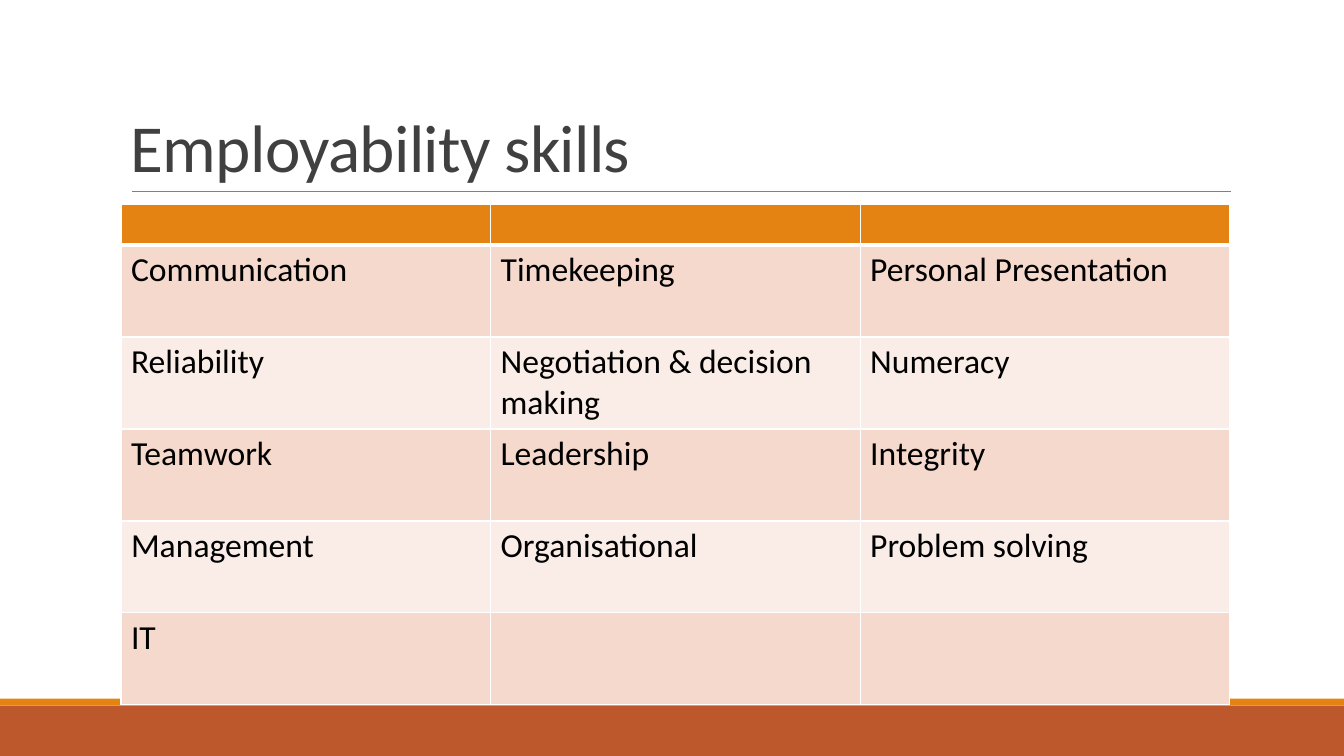
"""Build a slide with a table of employability skills."""
from lxml.etree import SubElement
from pptx import Presentation
from pptx.dml.color import RGBColor
from pptx.enum.shapes import MSO_CONNECTOR, MSO_SHAPE
from pptx.enum.text import MSO_ANCHOR
from pptx.oxml.ns import qn
from pptx.util import Inches, Pt

WIDE, HIGH = Inches(13.33), Inches(7.5)
LEFT, SPAN = 9, 82.5
ORANGE, RUST, WHITE = "E48312", "BD582C", "FFFFFF"
BANDS = ["F5D9CC", "FAEDE7"]
HEAD_ROW, SKILL_ROW = 5.4, 12.17
SKILLS = [
    ["Communication", "Timekeeping", "Personal Presentation"],
    ["Reliability", "Negotiation & decision making", "Numeracy"],
    ["Teamwork", "Leadership", "Integrity"],
    ["Management", "Organisational", "Problem solving"],
    ["IT", "", ""],
]


def across(share):
    """Turn a percentage of the slide's width into a length."""
    return round(WIDE * share / 100)


def down(share):
    """Turn a percentage of the slide's height into a length."""
    return round(HIGH * share / 100)


def place(left, top, wide, high):
    """Turn four percentages into a position and size."""
    return across(left), down(top), across(wide), down(high)


def tint(code):
    """Turn a hex string into a colour."""
    return RGBColor.from_string(code)


def paint(item, code):
    """Fill a shape or cell with a plain colour."""
    item.fill.solid()
    item.fill.fore_color.rgb = tint(code)


def write(frame, text, size=24, color="000000", font="Calibri", leading=None, spacing=0):
    """Put formatted text into a text frame."""
    frame.word_wrap = True
    line = frame.paragraphs[0]
    line.line_spacing = leading
    run = line.add_run()
    run.text = text
    run.font.size, run.font.name = Pt(size), font
    run.font.color.rgb = tint(color)
    if spacing:
        run.font._element.set("spc", str(round(spacing * 100)))


def add_bar(slide, top, high, color):
    """Draw a bar across the whole slide."""
    bar = slide.shapes.add_shape(MSO_SHAPE.RECTANGLE, *place(0, top, 100, high))
    bar.shadow.inherit = False
    bar.line.fill.background()
    paint(bar, color)


def add_rule(slide, left, right, top, color, weight):
    """Draw a level line."""
    rule = slide.shapes.add_connector(
        MSO_CONNECTOR.STRAIGHT, across(left), down(top), across(right), down(top))
    rule.line.color.rgb, rule.line.width = tint(color), Pt(weight)
    SubElement(rule._element.spPr, qn("a:effectLst"))


def add_title(slide, text):
    """Add the title, resting on the rule."""
    box = slide.shapes.add_textbox(*place(LEFT, 4.13, SPAN, 21.2))
    box.text_frame.vertical_anchor = MSO_ANCHOR.BOTTOM
    write(box.text_frame, text, size=48, color="404040", leading=0.85, spacing=-0.5)


def edge(cell, color, top=1, bottom=1):
    """Draw the four borders of a cell."""
    props = cell._tc.get_or_add_tcPr()
    for side, weight in zip("LRTB", (1, 1, top, bottom)):
        line = SubElement(props, qn(f"a:ln{side}"), w=str(Pt(weight)))
        fill = SubElement(line, qn("a:solidFill"))
        SubElement(fill, qn("a:srgbClr"), val=color)


def add_skills(slide, top):
    """Add the table, with an empty header and banded rows."""
    rows = [[""] * len(SKILLS[0])] + SKILLS
    high = HEAD_ROW + SKILL_ROW * len(SKILLS)
    table = slide.shapes.add_table(
        len(rows), len(rows[0]), *place(LEFT, top, SPAN, high)).table
    for r, row in enumerate(rows):
        table.rows[r].height = down(SKILL_ROW if r else HEAD_ROW)
        for c, text in enumerate(row):
            cell = table.cell(r, c)
            edge(cell, WHITE, top=3 if r == 1 else 1, bottom=1 if r else 3)
            paint(cell, BANDS[(r - 1) % 2] if r else ORANGE)
            if text:
                write(cell.text_frame, text)


def main():
    """Build the slide and save it."""
    deck = Presentation()
    deck.slide_width, deck.slide_height = WIDE, HIGH
    slide = deck.slides.add_slide(deck.slide_layouts[6])
    add_bar(slide, 93.33, 6.67, RUST)
    add_bar(slide, 92.4, 0.93, ORANGE)
    add_rule(slide, 9.83, 91.6, 25.33, "808080", 0.5)
    add_title(slide, "Employability skills")
    add_skills(slide, 27)
    deck.save("out.pptx")


if __name__ == "__main__":
    main()
